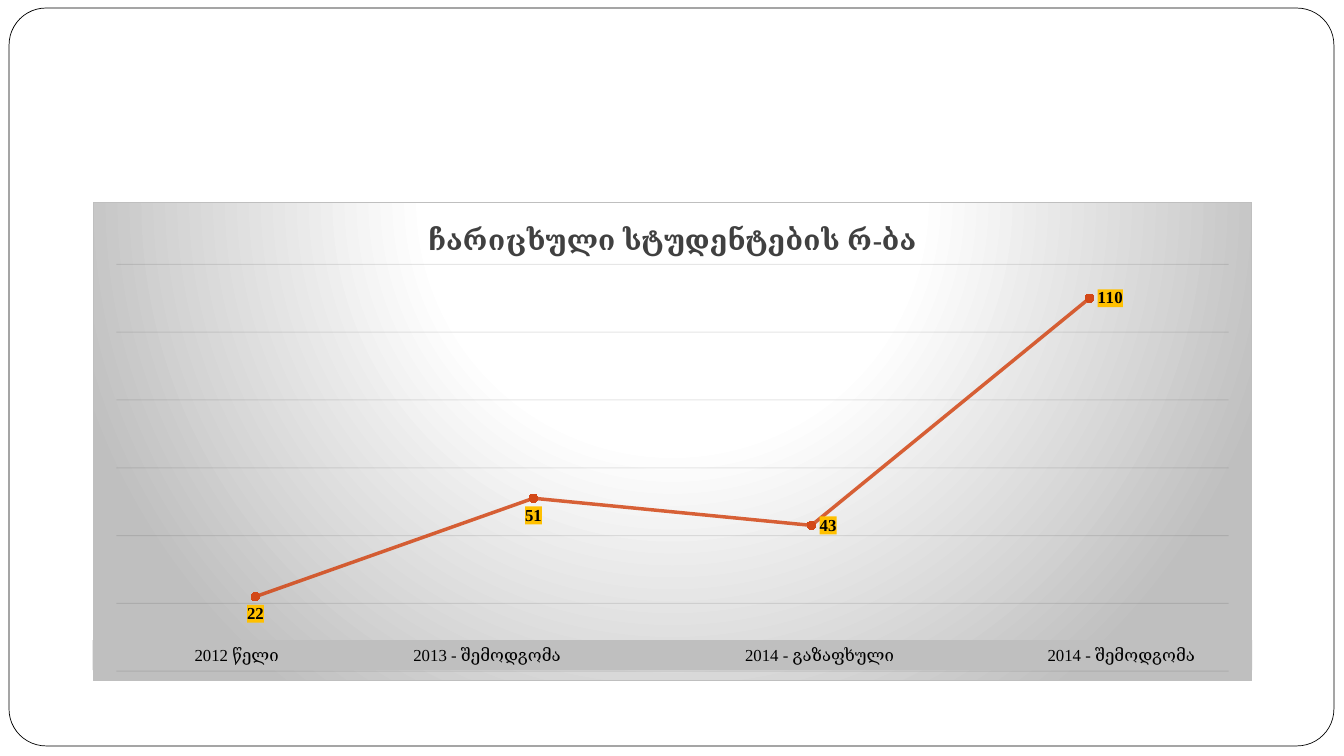
from dataclasses import dataclass

from lxml import etree
from pptx import Presentation
from pptx.chart.data import CategoryChartData
from pptx.dml.color import RGBColor
from pptx.enum.chart import XL_CHART_TYPE, XL_LABEL_POSITION, XL_MARKER_STYLE
from pptx.enum.shapes import MSO_SHAPE
from pptx.enum.text import MSO_ANCHOR, PP_ALIGN
from pptx.oxml import parse_xml
from pptx.oxml.ns import nsdecls, qn
from pptx.util import Inches, Pt

LINE_STACKED = XL_CHART_TYPE.LINE_MARKERS_STACKED
BELOW, RIGHT = XL_LABEL_POSITION.BELOW, XL_LABEL_POSITION.RIGHT
CIRCLE = XL_MARKER_STYLE.CIRCLE
RECT, ROUND_RECT = MSO_SHAPE.RECTANGLE, MSO_SHAPE.ROUNDED_RECTANGLE
MIDDLE, LEFT = MSO_ANCHOR.MIDDLE, PP_ALIGN.LEFT


@dataclass(frozen=True)
class Theme:
    font: str = "Times New Roman"
    white: str = "FFFFFF"
    black: str = "000000"
    gray: str = "BFBFBF"
    grid: str = "0D0D0D"
    title: str = "404040"
    accent: str = "D34817"
    label: str = "FFC000"
    title_size: int = 20
    text_size: int = 12
    chart_size: int = 10


THEME = Theme()
TITLE = "ჩარიცხული სტუდენტების რ-ბა"
STUDENTS = (22, 51, 43, 110)
# Term name and its distance in inches from the left end of the strip
TERMS = (("2012 წელი", 1.01), ("2013 - შემოდგომა", 3.18),
         ("2014 - გაზაფხული", 6.47), ("2014 - შემოდგომა", 9.47))


def rgb(color):
    return RGBColor.from_string(color)


def style_font(font, size, color=THEME.black, bold=False):
    font.name, font.size, font.bold = THEME.font, Pt(size), bold
    font.color.rgb = rgb(color)


def set_alpha(line, percent):
    color = line.fill._xPr.find(".//" + qn("a:srgbClr"))
    etree.SubElement(color, qn("a:alpha")).set("val", str(percent * 1000))


def add_box(s, kind, box, fill):
    shape = s.shapes.add_shape(kind, *map(Inches, box))
    shape.shadow.inherit = False
    shape.fill.solid()
    shape.fill.fore_color.rgb = rgb(fill)
    shape.line.fill.background()
    return shape


def add_frame(s, box):
    frame = add_box(s, ROUND_RECT, box, THEME.white)
    frame.adjustments[0] = 0.05
    frame.line.color.rgb = rgb(THEME.black)
    frame.line.width = Pt(0.5)


def fill_chart_area(chart):
    """Give the chart a radial gradient and a thin border."""
    stops = "".join(
        f'<a:gs pos="{pos * 1000}"><a:srgbClr val="{color}"/></a:gs>'
        for pos, color in ((0, THEME.white), (39, THEME.white), (100, THEME.gray)))
    sp_pr = parse_xml(
        f'<c:spPr {nsdecls("c", "a")}><a:gradFill><a:gsLst>{stops}</a:gsLst>'
        '<a:path path="circle">'
        '<a:fillToRect l="50000" t="-80000" r="50000" b="180000"/></a:path>'
        f'</a:gradFill><a:ln w="{Pt(0.75)}"><a:solidFill>'
        f'<a:srgbClr val="{THEME.gray}"/></a:solidFill></a:ln></c:spPr>')
    chart._chartSpace.find(qn("c:txPr")).addprevious(sp_pr)


def place_plot(chart, x, y, w, h):
    """Set the inner plot area in fractions of the chart."""
    plot_area = chart._chartSpace.chart.plotArea
    for old in plot_area.findall(qn("c:layout")):
        plot_area.remove(old)
    places = "".join(f'<c:{k} val="{v}"/>' for k, v in
                     (("x", x), ("y", y), ("w", w), ("h", h)))
    plot_area.insert(0, parse_xml(
        f'<c:layout {nsdecls("c")}><c:manualLayout><c:layoutTarget val="inner"/>'
        f'<c:xMode val="edge"/><c:yMode val="edge"/>{places}'
        '</c:manualLayout></c:layout>'))


def style_axes(chart):
    chart.category_axis.visible = False
    axis = chart.value_axis
    axis.visible = False
    axis.minimum_scale, axis.maximum_scale, axis.major_unit = 0, 120, 20
    axis.has_major_gridlines = True
    grid = axis.major_gridlines.format.line
    grid.color.rgb = rgb(THEME.grid)
    grid.width = Pt(0.75)
    set_alpha(grid, 10)


def style_series(series):
    series.smooth = False
    line = series.format.line
    line.color.rgb = rgb(THEME.accent)
    line.width = Pt(2.5)
    set_alpha(line, 85)
    marker = series.marker
    marker.style, marker.size = CIRCLE, 6
    marker.format.fill.solid()
    marker.format.fill.fore_color.rgb = rgb(THEME.accent)
    marker.format.line.color.rgb = rgb(THEME.accent)


def style_labels(series):
    labels = series.data_labels
    labels.show_value = True
    labels.position = RIGHT
    style_font(labels.font, THEME.text_size, bold=True)
    for i in (0, 1):
        label = series.points[i].data_label
        style_font(label.font, THEME.text_size, bold=True)
        label.position = BELOW
    for tx_pr in list(labels._element.iter(qn("c:txPr"))):
        tx_pr.addprevious(parse_xml(
            f'<c:spPr {nsdecls("c", "a")}><a:solidFill>'
            f'<a:srgbClr val="{THEME.label}"/></a:solidFill></c:spPr>'))


def add_student_chart(s, box):
    data = CategoryChartData()
    data.categories = [str(i + 1) for i in range(len(STUDENTS))]
    data.add_series("Series 1", STUDENTS)
    chart = s.shapes.add_chart(LINE_STACKED, *map(Inches, box), data).chart
    style_font(chart.font, THEME.chart_size)
    chart.has_legend = False
    chart.has_title = True
    p = chart.chart_title.text_frame.paragraphs[0]
    p.text = TITLE
    style_font(p.font, THEME.title_size, THEME.title, bold=True)
    chart.plots[0].vary_by_categories = False
    fill_chart_area(chart)
    place_plot(chart, 0.02, 0.13, 0.96, 0.85)
    style_axes(chart)
    series = chart.plots[0].series[0]
    style_series(series)
    style_labels(series)


def add_term_strip(s, box):
    """Name the terms under the chart, each at its own tab stop."""
    tf = add_box(s, RECT, box, THEME.gray).text_frame
    tf.margin_left = tf.margin_right = tf.margin_top = tf.margin_bottom = 0
    tf.vertical_anchor = MIDDLE
    tf.word_wrap = True
    p = tf.paragraphs[0]
    p.alignment = LEFT
    p.add_run().text = "".join("\t" + name for name, _ in TERMS)
    style_font(p.font, THEME.text_size)
    stops = "".join(f'<a:tab pos="{Inches(x)}" algn="l"/>' for _, x in TERMS)
    p._p.get_or_add_pPr().insert(
        0, parse_xml(f'<a:tabLst {nsdecls("a")}>{stops}</a:tabLst>'))


def main():
    prs = Presentation()
    prs.slide_width, prs.slide_height = Inches(13.33), Inches(7.5)
    s = prs.slides.add_slide(prs.slide_layouts[6])
    add_frame(s, (0.09, 0.08, 13.14, 7.32))
    left, top, width, height = 0.92, 2, 11.5, 4.76
    add_student_chart(s, (left, top, width, height))
    add_term_strip(s, (left, top + 4.35, width, 0.3))
    prs.save("out.pptx")


if __name__ == "__main__":
    main()
